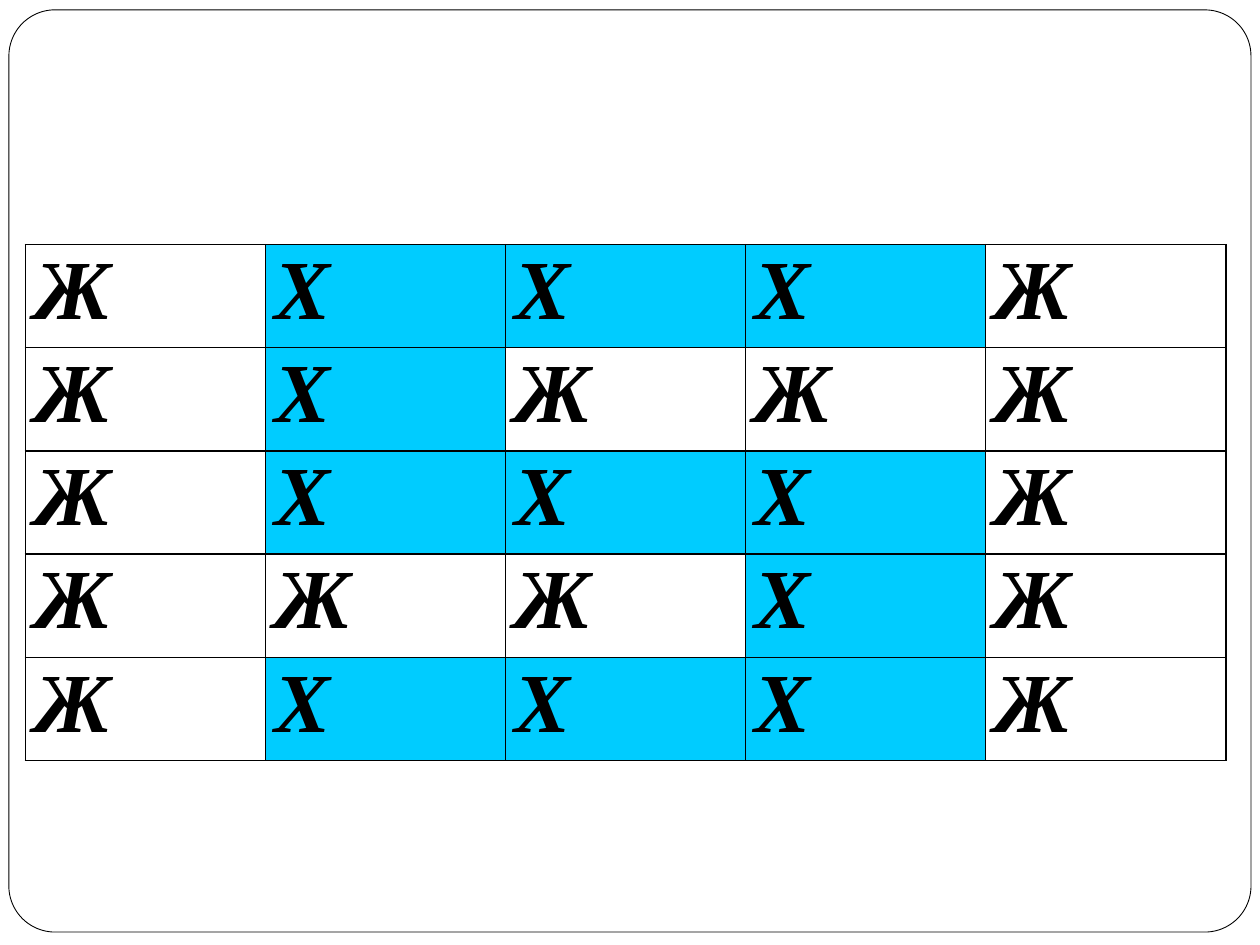
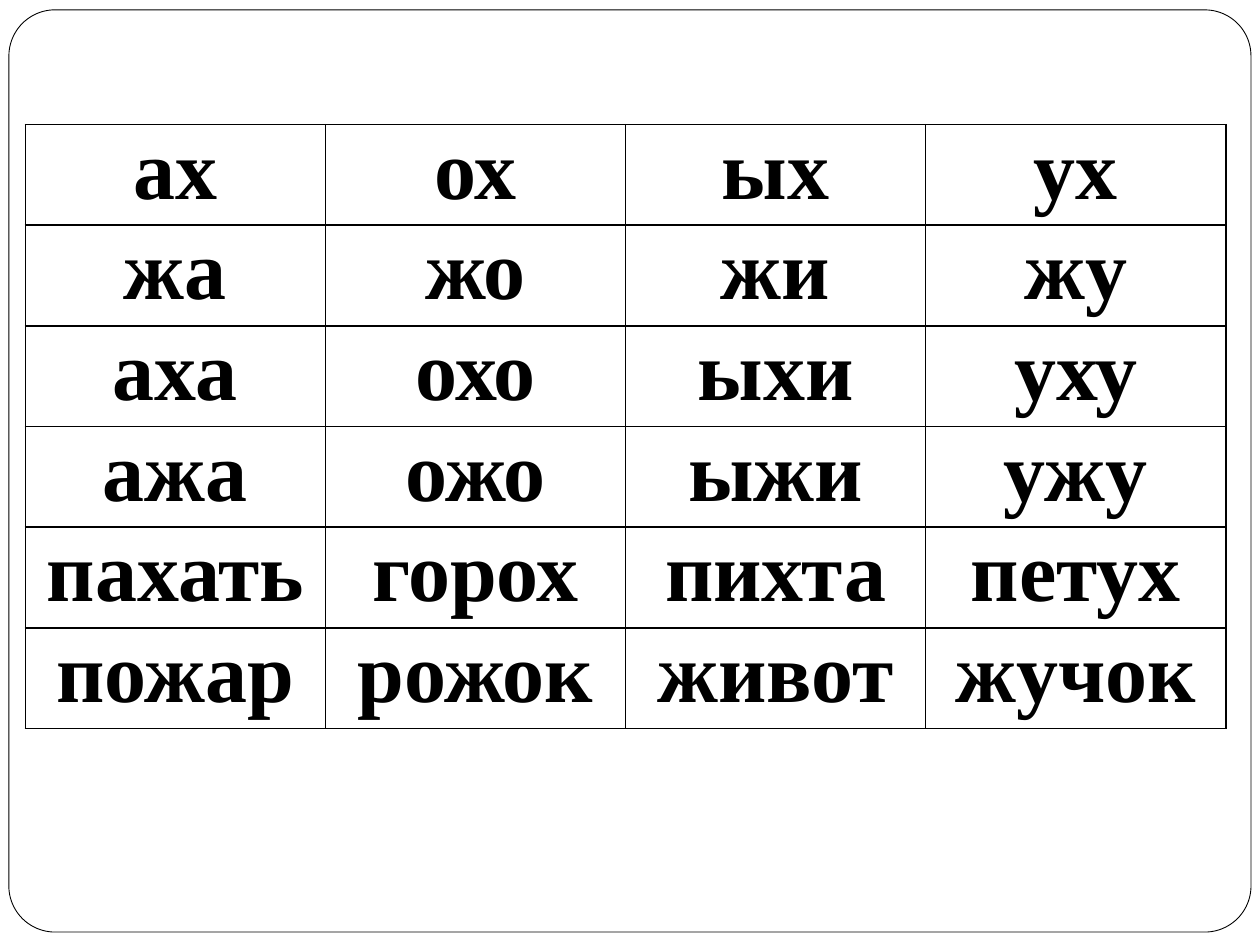
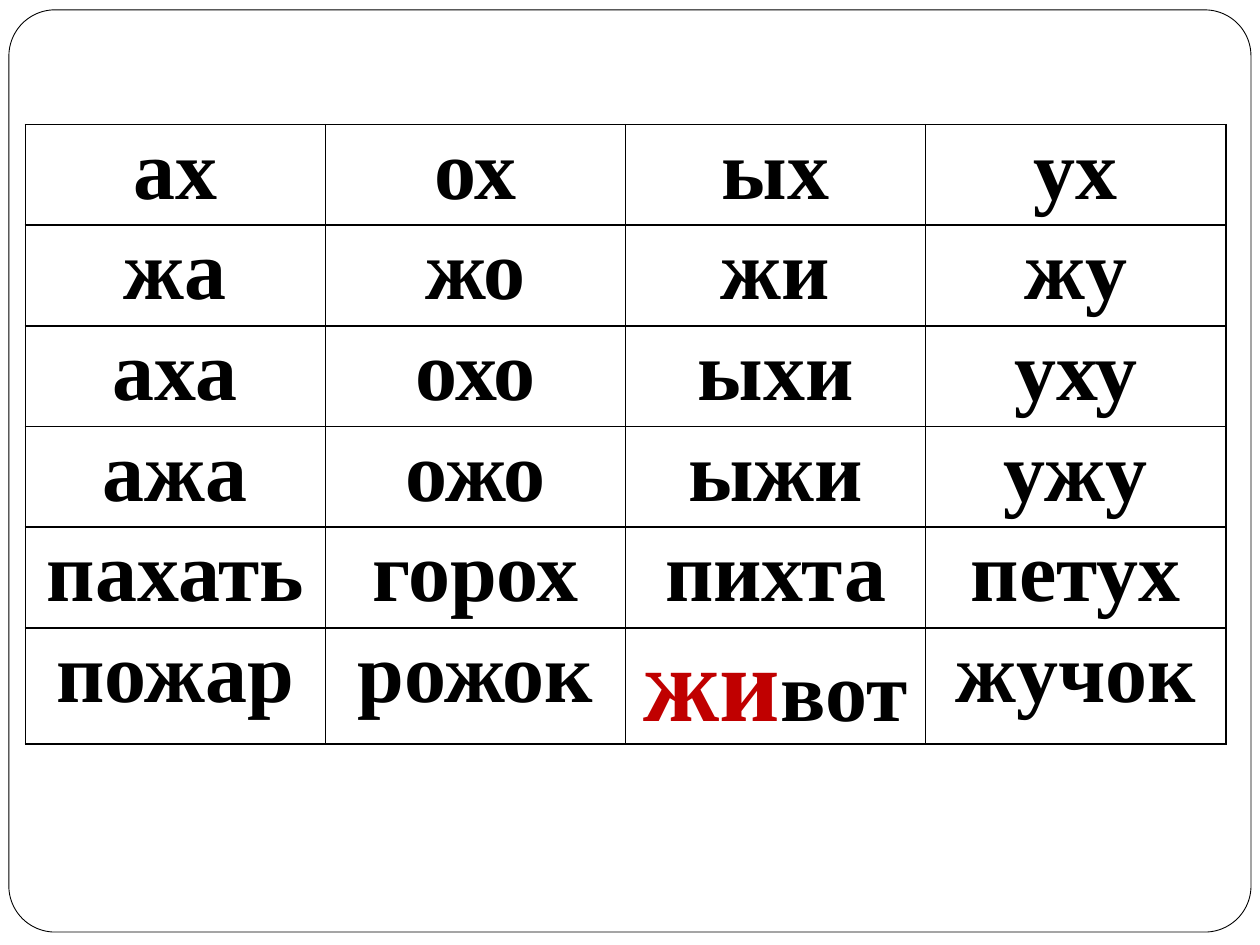
from dataclasses import dataclass

from lxml.etree import SubElement
from pptx import Presentation
from pptx.dml.color import RGBColor
from pptx.enum.shapes import MSO_SHAPE
from pptx.enum.text import PP_ALIGN
from pptx.oxml.ns import qn
from pptx.util import Cm, Pt


@dataclass(frozen=True)
class Theme:
    font: str = "Times New Roman"
    text_size: int = 48
    accent_size: int = 60
    frame_line: float = 0.5
    border: int = 1
    black: str = "000000"
    white: str = "FFFFFF"
    blue: str = "00CCFF"
    red: str = "C00000"


theme = Theme()
TABLE_LEFT, TABLE_WIDTH = 0.51, 24.2


def style_run(run, size=theme.text_size, color=theme.black, italic=False):
    run.font.name = theme.font
    run.font.size = Pt(size)
    run.font.bold = True
    run.font.italic = italic
    run.font.color.rgb = RGBColor.from_string(color)


def add_grid(slide, rows, top, row_height, alignment, italic=False, filled=""):
    """Add a bordered table; cells whose text is `filled` get a blue fill."""
    column_count = len(rows[0])
    table = slide.shapes.add_table(
        len(rows), column_count, Cm(TABLE_LEFT), Cm(top),
        Cm(TABLE_WIDTH), Cm(row_height * len(rows))).table
    table.first_row = table.horz_banding = False
    for column in table.columns:
        column.width = Cm(TABLE_WIDTH / column_count)

    for row, texts in zip(table.rows, rows):
        row.height = Cm(row_height)
        for cell, text in zip(row.cells, texts):
            cell.margin_left = cell.margin_right = Cm(0.18)
            cell.margin_top = cell.margin_bottom = 0

            # Cell borders
            properties = cell._tc.get_or_add_tcPr()
            for side in ("lnL", "lnR", "lnT", "lnB"):
                line = SubElement(properties, qn(f"a:{side}"), w=str(Pt(theme.border)))
                line_fill = SubElement(line, qn("a:solidFill"))
                SubElement(line_fill, qn("a:srgbClr"), val=theme.black)

            # Cell fill
            if text == filled:
                cell.fill.solid()
                cell.fill.fore_color.rgb = RGBColor.from_string(theme.blue)
            else:
                cell.fill.background()

            # Cell text
            paragraph = cell.text_frame.paragraphs[0]
            paragraph.text = text
            paragraph.alignment = alignment
            style_run(paragraph.runs[0], italic=italic)
    return table


presentation = Presentation()
presentation.slide_width, presentation.slide_height = Cm(25.4), Cm(19.05)
blank_layout = presentation.slide_layouts[6]
letter_slide, word_slide, accent_slide = [
    presentation.slides.add_slide(blank_layout) for _ in range(3)]

# Rounded frame, moved to the layout so that every slide shares it
frame = letter_slide.shapes.add_shape(
    MSO_SHAPE.ROUNDED_RECTANGLE, Cm(0.18), Cm(0.2), Cm(25.04), Cm(18.59))
frame.adjustments[0] = 0.05
frame.shadow.inherit = False
frame.fill.solid()
frame.fill.fore_color.rgb = RGBColor.from_string(theme.white)
frame.line.color.rgb = RGBColor.from_string(theme.black)
frame.line.width = Pt(theme.frame_line)
blank_layout.element.cSld.spTree.insert(2, frame.element)

# Slide 1: letter grid with every Х highlighted
letter_rows = ["ЖХХХЖ", "ЖХЖЖЖ", "ЖХХХЖ", "ЖЖЖХЖ", "ЖХХХЖ"]
add_grid(letter_slide, letter_rows, top=4.93, row_height=2.08,
         alignment=PP_ALIGN.LEFT, italic=True, filled="Х")

# Slides 2 and 3: syllables and words
word_rows = [
    ["ах", "ох", "ых", "ух"],
    ["жа", "жо", "жи", "жу"],
    ["аха", "охо", "ыхи", "уху"],
    ["ажа", "ожо", "ыжи", "ужу"],
    ["пахать", "горох", "пихта", "петух"],
    ["пожар", "рожок", "живот", "жучок"],
]
for slide in (word_slide, accent_slide):
    word_table = add_grid(slide, word_rows, top=2.51, row_height=2.03,
                          alignment=PP_ALIGN.CENTER)

# Slide 3: the first syllable of one word stands out
accent_paragraph = word_table.cell(5, 2).text_frame.paragraphs[0]
accent_paragraph.text = "жи"
style_run(accent_paragraph.runs[0], theme.accent_size, theme.red)
ending = accent_paragraph.add_run()
ending.text = "вот"
style_run(ending)

presentation.save("out.pptx")
